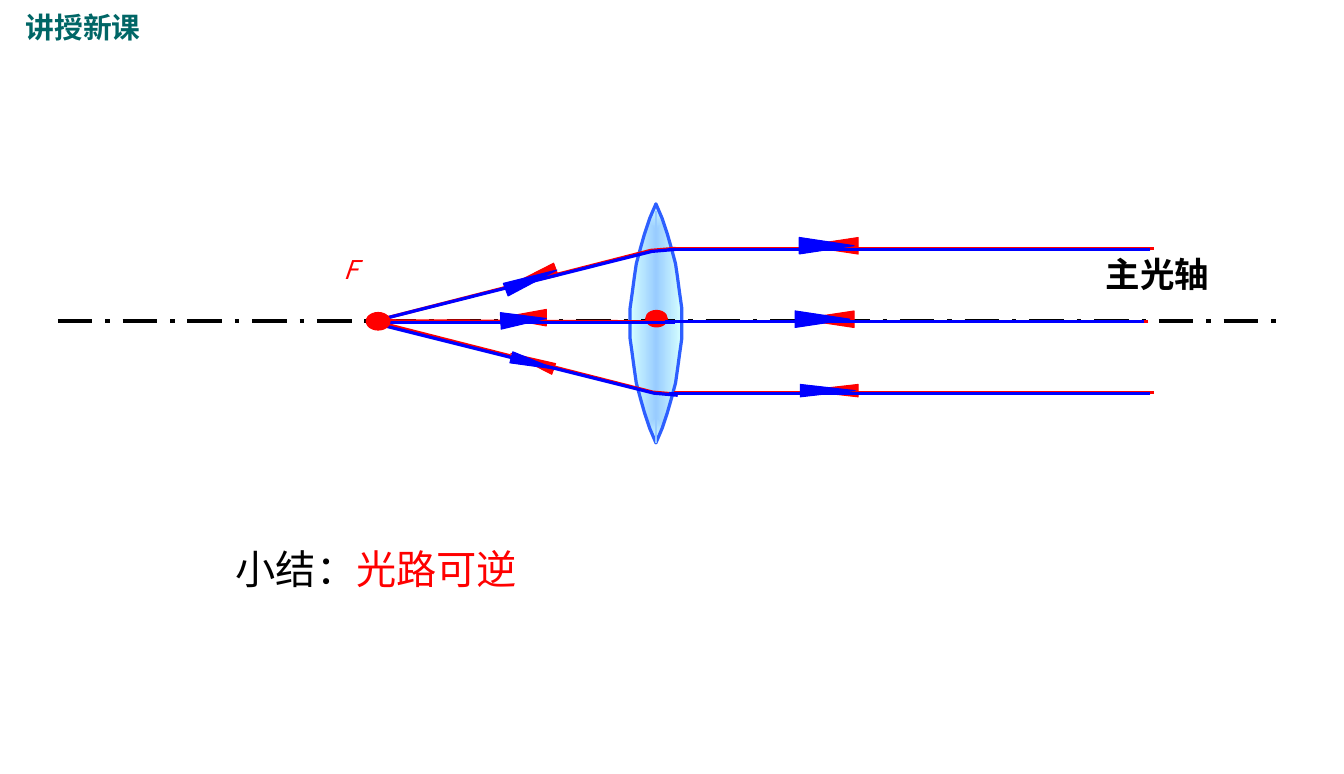
"""Slide on the reversibility of light through a convex lens."""
from lxml.etree import SubElement
from pptx import Presentation
from pptx.dml.color import RGBColor
from pptx.enum.dml import MSO_LINE
from pptx.enum.shapes import MSO_CONNECTOR, MSO_SHAPE
from pptx.oxml import parse_xml
from pptx.oxml.ns import nsdecls, qn
from pptx.util import Pt

PX = 9144
RED, BLUE, BLACK = "FF0000", "0000FF", "000000"
CJK = "Noto Sans CJK SC"

LENS = dict(cx=634, top=197, half_w=25, height=231, steps=16)
AXIS = [(56, 310), (1238, 310)]
CENTRE_DOT = (624, 300, 21, 16)
FOCUS_DOT = (354, 302, 23, 17)

RED_RAYS = [
    [(1115, 240), (650, 240)],
    [(1115, 379), (651, 379)],
    [(1110, 311), (647, 311)],
    [(655, 381), (631, 379), (360, 310)],
    [(653, 240), (629, 242), (359, 311)],
    [(651, 311), (360, 310)],
]
RED_HEADS = [
    (795, 211, 16, 53, 270),
    (797, 351, 12, 53, 270),
    (791, 282, 16, 53, 270),
    (509, 327, 11, 44, 290),
    (506, 243, 13, 53, 250),
    (498, 285, 16, 44, 270),
]
BLUE_RAYS = [
    [(655, 382), (632, 380), (360, 312)],
    [(653, 241), (630, 243), (355, 312)],
    [(652, 312), (360, 312)],
    [(1112, 241), (646, 241)],
    [(1112, 380), (647, 380)],
    [(1106, 311), (643, 311)],
]
BLUE_HEADS = [
    (510, 329, 11, 44, 105),
    (507, 244, 13, 53, 69),
    (498, 287, 16, 44, 87),
    (791, 211, 16, 53, 90),
    (794, 351, 12, 53, 90),
    (787, 282, 16, 53, 90),
]
LABELS = [
    ((322, 240, 72, 40), 18, CJK, False, True, [("F", RED)]),
    ((1059, 240, 179, 50), 24, CJK, True, False, [("主光轴", BLACK)]),
    ((218, 521, 466, 57), 28, CJK, False, False,
     [("小结：", BLACK), ("光路可逆", RED)]),
    ((15, 5, 184, 44), 20, "Arial", True, False, [("讲授新课", "006666")]),
]

prs = Presentation()
prs.slide_width, prs.slide_height = 1299 * PX, 748 * PX
s = prs.slides.add_slide(prs.slide_layouts[6])


def rgb(value):
    return RGBColor.from_string(value)


def set_line(sp, color, width):
    sp.line.color.rgb = rgb(color)
    sp.line.width = Pt(width)


def add_solid(kind, box, color, rotation=0):
    sp = s.shapes.add_shape(kind, *(v * PX for v in box))
    sp.shadow.inherit = False
    sp.rotation = rotation
    sp.fill.solid()
    sp.fill.fore_color.rgb = rgb(color)
    set_line(sp, color, 0.75)


def add_outline(points, color, close):
    fb = s.shapes.build_freeform(*points[0], scale=PX)
    fb.add_line_segments(points[1:], close=close)
    sp = fb.convert_to_shape()
    sp.shadow.inherit = False
    sp.fill.background()
    set_line(sp, color, 2.25)
    return sp


def add_line(start, end, color, width):
    ends = (v * PX for v in (*start, *end))
    sp = s.shapes.add_connector(MSO_CONNECTOR.STRAIGHT, *ends)
    set_line(sp, color, width)
    SubElement(sp._element.spPr, qn("a:effectLst"))
    return sp


def add_lens(cx, top, half_w, height, steps):
    ts = [2 * i / steps - 1 for i in range(steps + 1)]
    left = [(cx - half_w * (1 - t * t), top + height * (t + 1) / 2) for t in ts]
    right = [(2 * cx - x, y) for x, y in reversed(left)]
    sp = add_outline(left + right[1:-1], "2D5FFF", True)
    spPr = sp._element.spPr
    spPr.replace(spPr.find(qn("a:noFill")), parse_xml(
        f'<a:gradFill {nsdecls("a")} rotWithShape="1"><a:gsLst>'
        '<a:gs pos="0"><a:srgbClr val="99CCFF"/></a:gs>'
        '<a:gs pos="100000"><a:srgbClr val="D5FFFF"/></a:gs></a:gsLst>'
        '<a:path path="shape"><a:fillToRect l="50000" t="50000" r="50000" b="50000"/>'
        '</a:path></a:gradFill>'))
    add_line((cx, top + 7), (cx, top + height), "99CCFF", 1)


def add_rays(rays, heads, color):
    for ray, (*box, rotation) in zip(rays, heads):
        if len(ray) == 2:
            add_line(*ray, color, 2.25)
        else:
            add_outline(ray, color, False)
        add_solid(MSO_SHAPE.ISOSCELES_TRIANGLE, box, color, rotation)


def add_label(box, size, font, bold, italic, runs):
    tf = s.shapes.add_textbox(*(v * PX for v in box)).text_frame
    tf.word_wrap = True
    p = tf.paragraphs[0]
    p.font.size, p.font.name = Pt(size), font
    p.font.bold, p.font.italic = bold, italic
    SubElement(p._p.pPr.find(qn("a:defRPr")), qn("a:ea"), typeface=CJK)
    for text, color in runs:
        r = p.add_run()
        r.text = text
        r.font.color.rgb = rgb(color)


add_lens(**LENS)
add_line(*AXIS, BLACK, 3).line.dash_style = MSO_LINE.LONG_DASH_DOT
add_solid(MSO_SHAPE.OVAL, CENTRE_DOT, RED)
add_rays(RED_RAYS, RED_HEADS, RED)
add_rays(BLUE_RAYS, BLUE_HEADS, BLUE)
add_solid(MSO_SHAPE.OVAL, FOCUS_DOT, RED)
for label in LABELS:
    add_label(*label)

prs.save("out.pptx")
